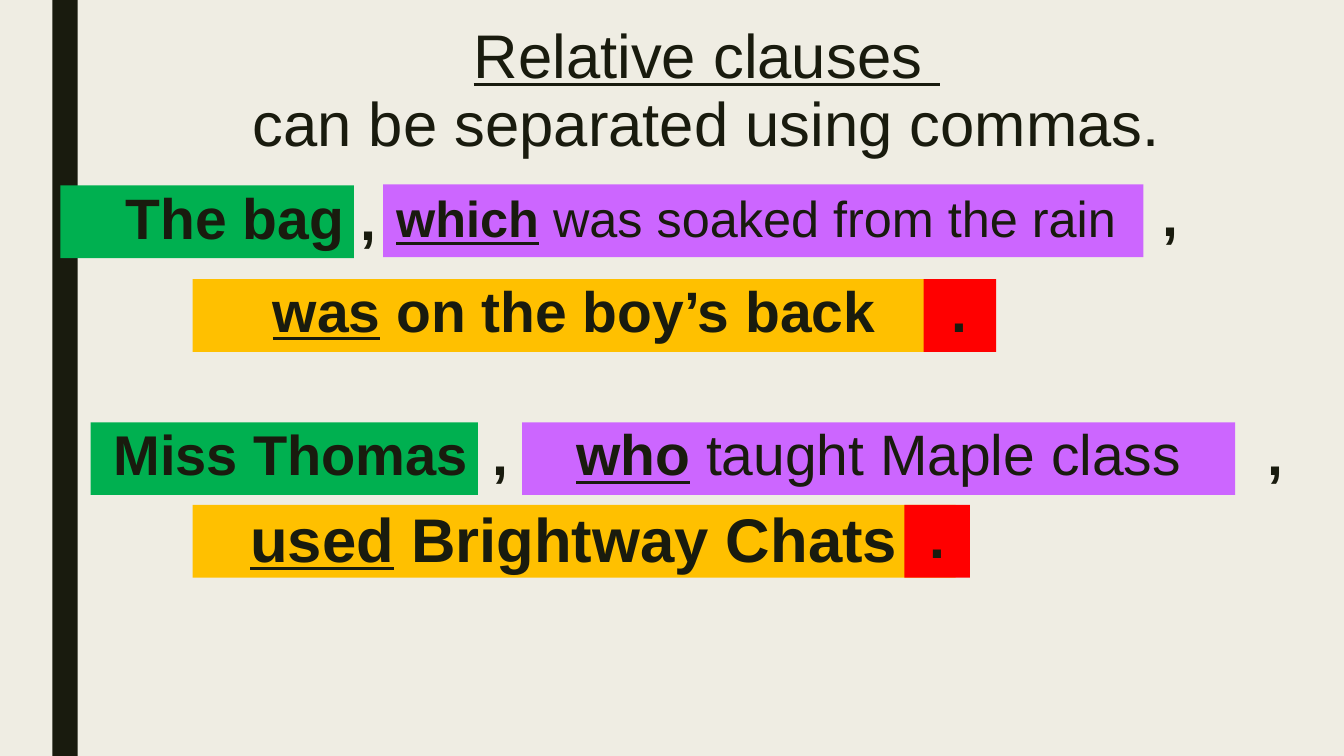
from pptx import Presentation
from pptx.dml.color import RGBColor
from pptx.enum.shapes import MSO_SHAPE
from pptx.enum.text import MSO_ANCHOR, PP_ALIGN
from pptx.util import Inches, Pt

CREAM = RGBColor(0xEF, 0xED, 0xE3)
INK = RGBColor(0x19, 0x1B, 0x0E)
GREEN = RGBColor(0x00, 0xB0, 0x50)
PURPLE = RGBColor(0xCC, 0x66, 0xFF)
AMBER = RGBColor(0xFF, 0xC0, 0x00)
RED = RGBColor(0xFF, 0x00, 0x00)
FONT = "Arial"
HEIGHT = 0.72


def style_paragraph(p, size, bold, align, line_spacing):
    p.font.name = FONT
    p.font.size = Pt(size)
    p.font.bold = bold
    p.font.color.rgb = INK
    p.alignment = align
    p.line_spacing = line_spacing


def add_run(p, text, underline=None, bold=None):
    r = p.add_run()
    r.text = text
    r.font.underline = underline
    r.font.bold = bold


def add_rect(slide, left, top, width, height, color):
    sp = slide.shapes.add_shape(MSO_SHAPE.RECTANGLE, Inches(left), Inches(top),
                                Inches(width), Inches(height))
    sp.shadow.inherit = False
    sp.fill.solid()
    sp.fill.fore_color.rgb = color
    sp.line.fill.background()
    return sp


def write_phrase(sp, keyword, rest="", size=40.7, align=PP_ALIGN.CENTER,
                 line_spacing=0.84, rest_bold=None):
    tf = sp.text_frame
    tf.word_wrap = True
    tf.vertical_anchor = MSO_ANCHOR.MIDDLE
    p = tf.paragraphs[0]
    style_paragraph(p, size, True, align, line_spacing)
    p.space_before = Pt(10)
    p.space_after = Pt(2)
    add_run(p, keyword, underline=bool(rest) or None)
    if rest:
        add_run(p, rest, bold=rest_bold)


def add_card(slide, left, top, width, color, keyword, rest="", **style):
    sp = add_rect(slide, left, top, width, HEIGHT, color)
    write_phrase(sp, keyword, rest, **style)


def add_comma(slide, left, top):
    sp = slide.shapes.add_textbox(Inches(left), Inches(top), Inches(HEIGHT), Inches(HEIGHT))
    write_phrase(sp, ",")


def add_title(slide):
    title = slide.shapes.title
    title.left, title.top = Inches(1.76), Inches(0.18)
    title.width, title.height = Inches(10.5), Inches(1.62)
    tf = title.text_frame
    tf.word_wrap = True
    tf.vertical_anchor = MSO_ANCHOR.TOP
    p = tf.paragraphs[0]
    style_paragraph(p, 44, False, PP_ALIGN.CENTER, 0.93)
    add_run(p, "Relative clauses ", underline=True)
    p.add_line_break()
    add_run(p, "can be separated using commas.")


def main():
    prs = Presentation()
    prs.slide_width, prs.slide_height = Inches(13.33), Inches(7.5)
    s = prs.slides.add_slide(prs.slide_layouts[5])
    s.background.fill.solid()
    s.background.fill.fore_color.rgb = CREAM
    add_rect(s, 0.52, 0, 0.25, 7.5, INK)
    add_title(s)

    add_card(s, 1.91, 2.77, 7.57, AMBER, "was", " on the boy’s back")
    add_card(s, 0.6, 1.84, 2.91, GREEN, "The bag", align=PP_ALIGN.RIGHT)
    add_card(s, 9.16, 2.77, 0.72, RED, ".")
    add_card(s, 1.91, 5.01, 7.57, AMBER, "used", " Brightway Chats", size=44,
             line_spacing=0.94)
    add_card(s, 0.9, 4.19, 3.84, GREEN, "Miss Thomas", size=40, align=PP_ALIGN.RIGHT)
    add_card(s, 8.97, 5.01, 0.65, RED, ".")
    add_card(s, 3.8, 1.83, 7.54, PURPLE, "which", " was soaked from the rain ",
             size=36, line_spacing=0.94, rest_bold=False)
    add_card(s, 5.18, 4.19, 7.07, PURPLE, "who", " taught Maple class", rest_bold=False)
    for left, top in ((3.29, 1.85), (11.25, 1.82), (4.6, 4.19), (12.29, 4.19)):
        add_comma(s, left, top)

    prs.save("out.pptx")


if __name__ == "__main__":
    main()
